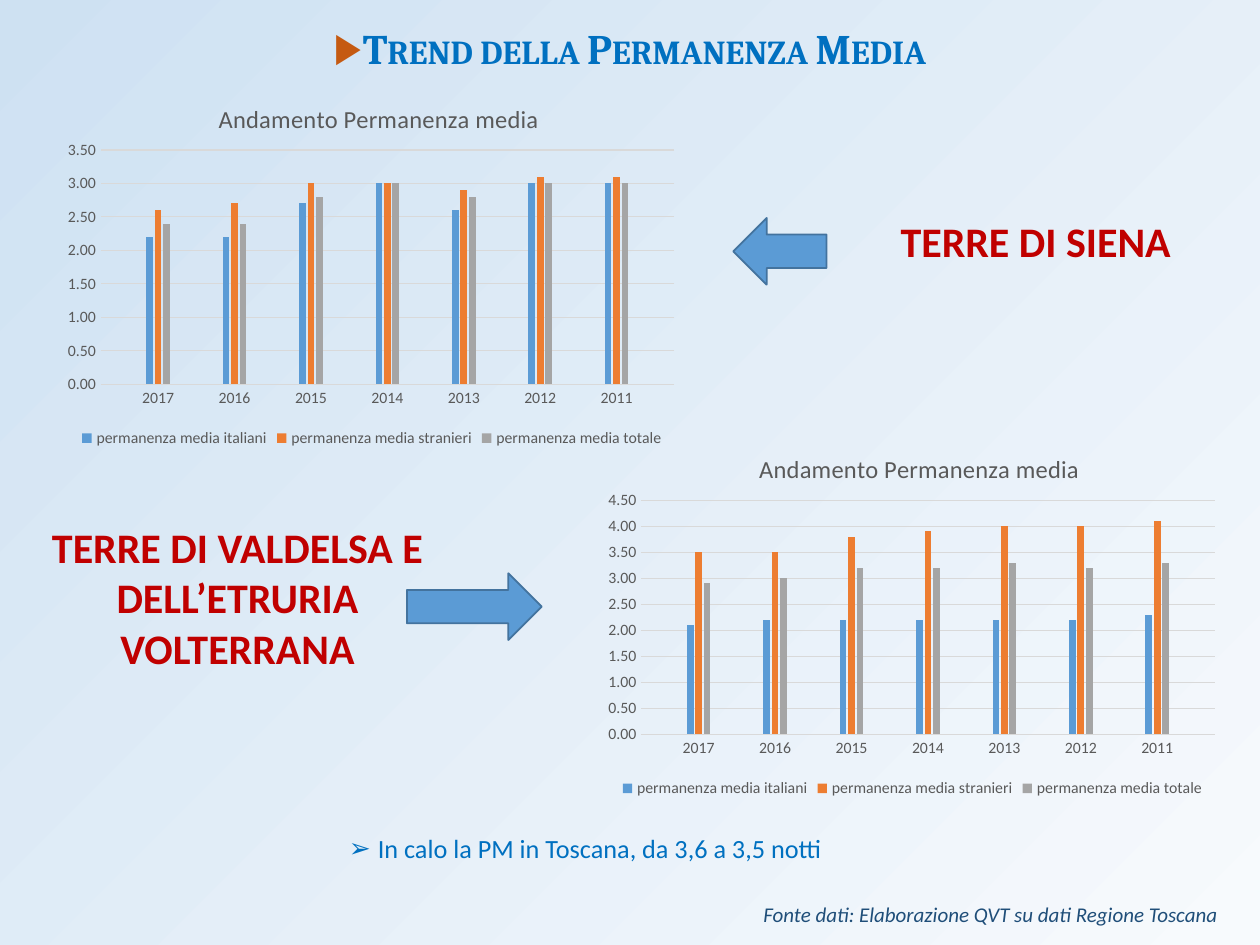
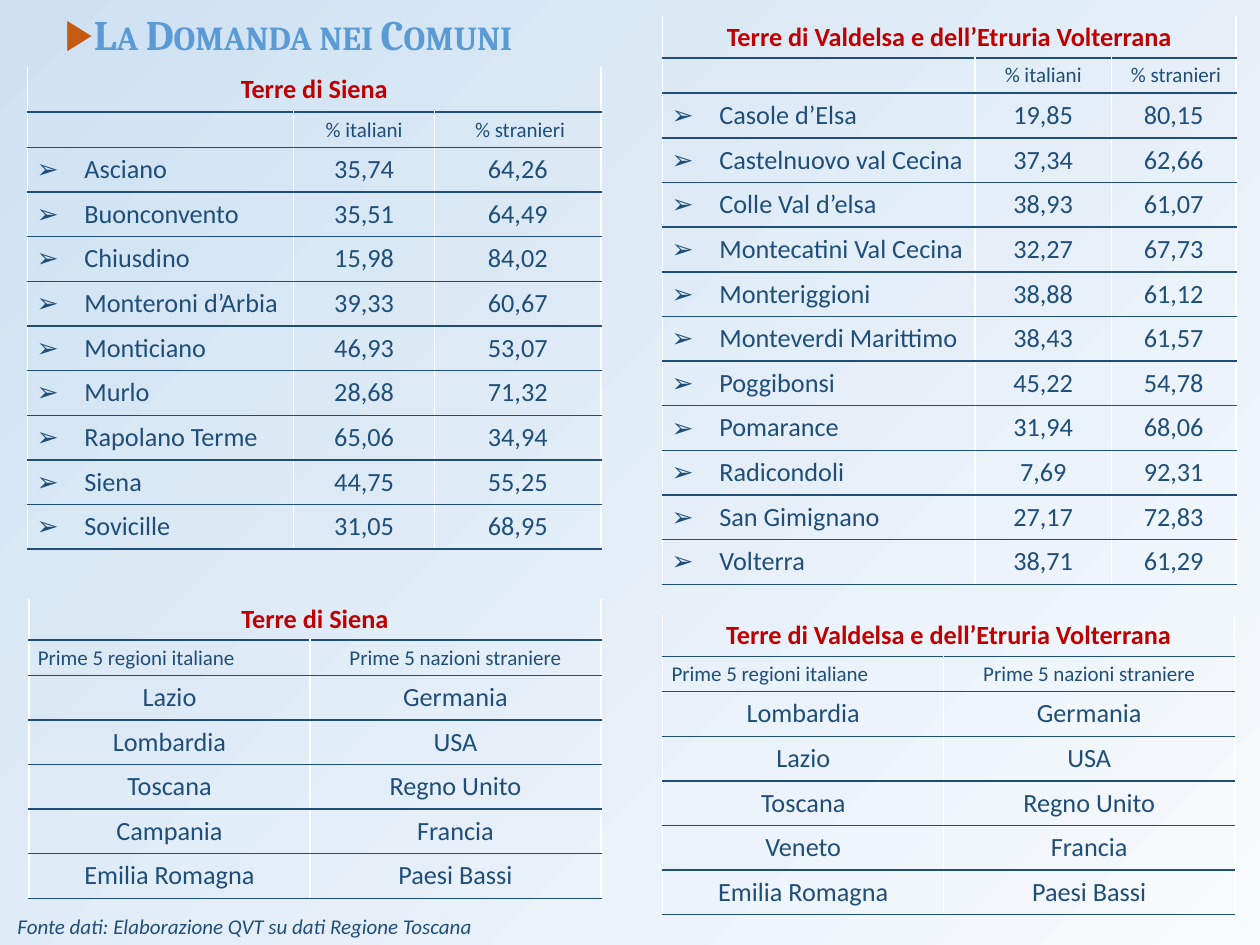
from dataclasses import dataclass

from lxml.etree import SubElement
from pptx import Presentation
from pptx.chart.data import CategoryChartData
from pptx.dml.color import RGBColor
from pptx.enum.chart import XL_CHART_TYPE, XL_LEGEND_POSITION, XL_TICK_MARK
from pptx.enum.shapes import MSO_SHAPE
from pptx.enum.text import MSO_ANCHOR, MSO_AUTO_SIZE, PP_ALIGN
from pptx.oxml import parse_xml
from pptx.oxml.ns import nsdecls, qn
from pptx.util import Pt

PX = 9144  # EMU in one px, at 100 px to the inch


@dataclass(frozen=True)
class Theme:
    pale: str = "F7FAFD"
    sky: str = "CEE1F2"
    blue: str = "0070C0"
    accent: str = "5B9BD5"
    outline: str = "43739E"
    navy: str = "1F4E79"
    red: str = "C00000"
    rust: str = "C55A11"
    orange: str = "ED7D31"
    silver: str = "A5A5A5"
    grid: str = "D9D9D9"
    grey: str = "595959"
    white: str = "FFFFFF"
    body_font: str = "Calibri"
    title_font: str = "Cambria"
    title: int = 24
    text: int = 15
    chart_title: int = 14
    small: int = 12
    label: int = 9


theme = Theme()


def write(frame, text, *, size=theme.text, color=theme.navy, font=theme.body_font,
          bold=False, italic=False, small_caps=False, align=PP_ALIGN.LEFT,
          space_after=0, bullet=None, bullet_color=None, indent=23):
    """Put one formatted paragraph into a text frame."""
    para = frame.paragraphs[0]
    para.alignment = align
    para.space_after = Pt(space_after)
    if bullet:
        props = para._p.get_or_add_pPr()
        props.set("marL", str(indent * PX))
        props.set("indent", str(-indent * PX))
        mark_color = SubElement(props, qn("a:buClr"))
        SubElement(mark_color, qn("a:srgbClr"), val=bullet_color or color)
        SubElement(props, qn("a:buFont"), typeface="Arial")
        SubElement(props, qn("a:buChar"), char=bullet)
    if not text:
        SubElement(para._p, qn("a:endParaRPr"), sz=str(size * 100))
        return
    span = para.add_run()
    span.text = text
    span.font.size = Pt(size)
    span.font.name = font
    span.font.bold = bold
    span.font.italic = italic
    span.font.color.rgb = RGBColor.from_string(color)
    if small_caps:
        span._r.get_or_add_rPr().set("cap", "small")


def add_text(page, left, top, width, height, text, **style):
    """Add a wrapping text box that holds one paragraph."""
    box = page.shapes.add_textbox(left * PX, top * PX, width * PX, height * PX)
    box.text_frame.word_wrap = True
    box.text_frame.auto_size = MSO_AUTO_SIZE.SHAPE_TO_FIT_TEXT
    write(box.text_frame, text, **style)


deck = Presentation()
deck.slide_width = 1000 * PX
deck.slide_height = 750 * PX

# Shared on both slides: background, title, source line
SOURCE = "Fonte dati: Elaborazione QVT su dati Regione Toscana"
pages = []
for title, title_top, title_width, title_color, source_left, source_top in (
    ("Trend della Permanenza Media", 13, 1000, theme.blue, 596, 711),
    ("La Domanda nei Comuni", 2, 458, theme.accent, 4, 720),
):
    page = deck.slides.add_slide(deck.slide_layouts[6])
    fill = page.background.fill
    fill.gradient()
    fill.gradient_angle = 135
    for stop, color, position in zip(fill.gradient_stops, (theme.pale, theme.sky), (0, 1)):
        stop.color.rgb = RGBColor.from_string(color)
        stop.position = position
    add_text(page, 0, title_top, title_width, 50, title, size=theme.title,
             color=title_color, font=theme.title_font, bold=True, small_caps=True,
             align=PP_ALIGN.CENTER, bullet="▶", bullet_color=theme.rust)
    add_text(page, source_left, source_top, 411, 30, SOURCE, size=theme.small, italic=True)
    pages.append(page)
trend_page, demand_page = pages

# Slide 1: note, area names and arrows
add_text(trend_page, 267, 656, 421, 35, "In calo la PM in Toscana, da 3,6 a 3,5 notti",
         color=theme.blue, bullet="➢")

for left, top, width, height, area in (
    (654, 166, 336, 50, "TERRE DI SIENA"),
    (0, 409, 377, 131, "TERRE DI VALDELSA E DELL’ETRURIA VOLTERRANA"),
):
    add_text(trend_page, left, top, width, height, area, size=theme.title,
             color=theme.red, bold=True, align=PP_ALIGN.CENTER, space_after=4.5)

for preset, left, top, width in (
    (MSO_SHAPE.LEFT_ARROW, 582, 173, 74),
    (MSO_SHAPE.RIGHT_ARROW, 323, 455, 107),
):
    arrow = trend_page.shapes.add_shape(preset, left * PX, top * PX, width * PX, 53 * PX)
    arrow.shadow.inherit = False
    arrow.fill.solid()
    arrow.fill.fore_color.rgb = RGBColor.from_string(theme.accent)
    arrow.line.color.rgb = RGBColor.from_string(theme.outline)
    arrow.line.width = Pt(1)

# Slide 1: charts, with an empty category on each side of every year
YEARS = ("2017", "2016", "2015", "2014", "2013", "2012", "2011")
SERIES = (("italiani", theme.accent), ("stranieri", theme.orange), ("totale", theme.silver))
for left, top, stays in (
    (45, 59, ((2.2, 2.2, 2.7, 3, 2.6, 3, 3),
              (2.6, 2.7, 3, 3, 2.9, 3.1, 3.1),
              (2.4, 2.4, 2.8, 3, 2.8, 3, 3))),
    (474, 337, ((2.1, 2.2, 2.2, 2.2, 2.2, 2.2, 2.3),
                (3.5, 3.5, 3.8, 3.9, 4, 4, 4.1),
                (2.9, 3, 3.2, 3.2, 3.3, 3.2, 3.3))),
):
    data = CategoryChartData(number_format="0.00")
    data.categories = [""] + [label for year in YEARS for label in (year, "")]
    for (guests, _), values in zip(SERIES, stays):
        data.add_series(f"permanenza media {guests}",
                        [None] + [item for value in values for item in (value, None)])
    chart = trend_page.shapes.add_chart(XL_CHART_TYPE.COLUMN_CLUSTERED, left * PX, top * PX,
                                        500 * PX, 300 * PX, data).chart
    chart.font.name = theme.body_font
    chart.font.size = Pt(theme.label)
    chart.font.color.rgb = RGBColor.from_string(theme.grey)

    chart.has_title = True
    write(chart.chart_title.text_frame, "Andamento Permanenza media",
          size=theme.chart_title, color=theme.grey)
    chart.has_legend = True
    chart.legend.position = XL_LEGEND_POSITION.BOTTOM
    chart.legend.include_in_layout = False

    plot = chart.plots[0]
    plot.gap_width = 219
    plot.overlap = -27
    plot.vary_by_categories = False
    for series, (_, color) in zip(plot.series, SERIES):
        series.format.fill.solid()
        series.format.fill.fore_color.rgb = RGBColor.from_string(color)

    years, nights = chart.category_axis, chart.value_axis
    for axis in (years, nights):
        axis.major_tick_mark = XL_TICK_MARK.NONE
        axis.minor_tick_mark = XL_TICK_MARK.NONE
    nights.has_major_gridlines = True
    for line in (years.format.line, nights.major_gridlines.format.line):
        line.color.rgb = RGBColor.from_string(theme.grid)
        line.width = Pt(0.75)
    nights.format.line.fill.background()
    nights.tick_labels.number_format = "0.00"
    nights.tick_labels.number_format_is_linked = False

    # Fixed places for the title and the plot area, as shares of the chart
    for part, places in (
        (chart.chart_title._element, {"xMode": "edge", "yMode": "edge", "x": 0.25, "y": 0.06}),
        (chart._chartSpace.chart.plotArea,
         {"layoutTarget": "inner", "xMode": "edge", "yMode": "edge",
          "x": 0.07, "y": 0.2, "w": 0.91, "h": 0.62}),
    ):
        for old_layout in part.findall(qn("c:layout")):
            part.remove(old_layout)
        settings = "".join(f'<c:{name} val="{value}"/>' for name, value in places.items())
        layout = parse_xml(f'<c:layout {nsdecls("c")}><c:manualLayout>{settings}'
                           "</c:manualLayout></c:layout>")
        text = part.find(qn("c:tx"))
        part.insert(0 if text is None else 1, layout)

# Slide 2: tables
SIENA = "Terre di Siena"
VALDELSA = "Terre di Valdelsa e dell’Etruria Volterrana"
SHARES = ("", "% italiani", " % stranieri")
ORIGINS = ("Prime 5 regioni italiane", "Prime 5 nazioni straniere")
NATIONS = ("Germania", "USA", "Regno Unito", "Francia", "Paesi Bassi")
siena_towns = (
    ("Asciano", "35,74", "64,26"),
    ("Buonconvento", "35,51", "64,49"),
    ("Chiusdino", "15,98", "84,02"),
    ("Monteroni d’Arbia", "39,33", "60,67"),
    ("Monticiano", "46,93", "53,07"),
    ("Murlo", "28,68", "71,32"),
    ("Rapolano Terme", "65,06", "34,94"),
    ("Siena", "44,75", "55,25"),
    ("Sovicille", "31,05", "68,95"),
)
valdelsa_towns = (
    ("Casole d’Elsa", "19,85", "80,15"),
    ("Castelnuovo val Cecina", "37,34", "62,66"),
    ("Colle Val d’elsa", "38,93", "61,07"),
    ("Montecatini Val Cecina", "32,27", "67,73"),
    ("Monteriggioni", "38,88", "61,12"),
    ("Monteverdi Marittimo", "38,43", "61,57"),
    ("Poggibonsi", "45,22", "54,78"),
    ("Pomarance", "31,94", "68,06"),
    ("Radicondoli", "7,69", "92,31"),
    ("San Gimignano", "27,17", "72,83"),
    ("Volterra", "38,71", "61,29"),
)
siena_regions = ("Lazio", "Lombardia", "Toscana", "Campania", "Emilia Romagna")
valdelsa_regions = ("Lombardia", "Lazio", "Toscana", "Veneto", "Emilia Romagna")

HEADING = 28
for left, top, height, name_height, widths, area, headings, records in (
    (22, 53, 383, 36, (211, 112, 132), SIENA, SHARES, siena_towns),
    (526, 13, 451, 33, (248, 108, 99), VALDELSA, SHARES, valdelsa_towns),
    (23, 475, 238, 33, (223, 231), SIENA, ORIGINS, tuple(zip(siena_regions, NATIONS))),
    (526, 488, 238, 33, (223, 231), VALDELSA, ORIGINS, tuple(zip(valdelsa_regions, NATIONS))),
):
    rows = ((area,) + ("",) * (len(widths) - 1), headings) + records
    table = demand_page.shapes.add_table(len(rows), len(widths), left * PX, top * PX,
                                         sum(widths) * PX, height * PX).table
    table.first_row = False
    table.horz_banding = False
    for column, width in zip(table.columns, widths):
        column.width = width * PX
    record_height = (height - name_height - HEADING) * PX // len(records)
    heights = [name_height * PX, HEADING * PX] + [record_height] * len(records)
    table.cell(0, 0).merge(table.cell(0, len(widths) - 1))

    for row_number, row in enumerate(rows):
        table.rows[row_number].height = heights[row_number]
        for column_number, text in enumerate(row):
            cell = table.cell(row_number, column_number)
            cell.vertical_anchor = MSO_ANCHOR.MIDDLE
            cell.margin_left = cell.margin_right = 7 * PX
            cell.margin_top = cell.margin_bottom = 4 * PX
            cell.fill.background()

            style = {"align": PP_ALIGN.CENTER}
            if row_number == 0:
                style.update(color=theme.red, bold=True)
            elif row_number == 1:
                style.update(size=theme.small)
                if column_number == 0:
                    style.update(align=PP_ALIGN.LEFT)
            elif column_number == 0 and headings is SHARES:
                style.update(align=PP_ALIGN.LEFT, bullet="➢", indent=38)
            write(cell.text_frame, text, **style)

            # White at the sides, navy between rows, nothing above the area name
            top_color = theme.navy if row_number else None
            edges = (("L", theme.white), ("R", theme.white), ("T", top_color), ("B", theme.navy))
            for place, (side, color) in enumerate(edges):
                paint = (f'<a:solidFill><a:srgbClr val="{color}"/></a:solidFill>'
                         if color else "<a:noFill/>")
                edge = parse_xml(f'<a:ln{side} {nsdecls("a")} w="{Pt(1)}">{paint}</a:ln{side}>')
                cell._tc.get_or_add_tcPr().insert(place, edge)

deck.save("out.pptx")
